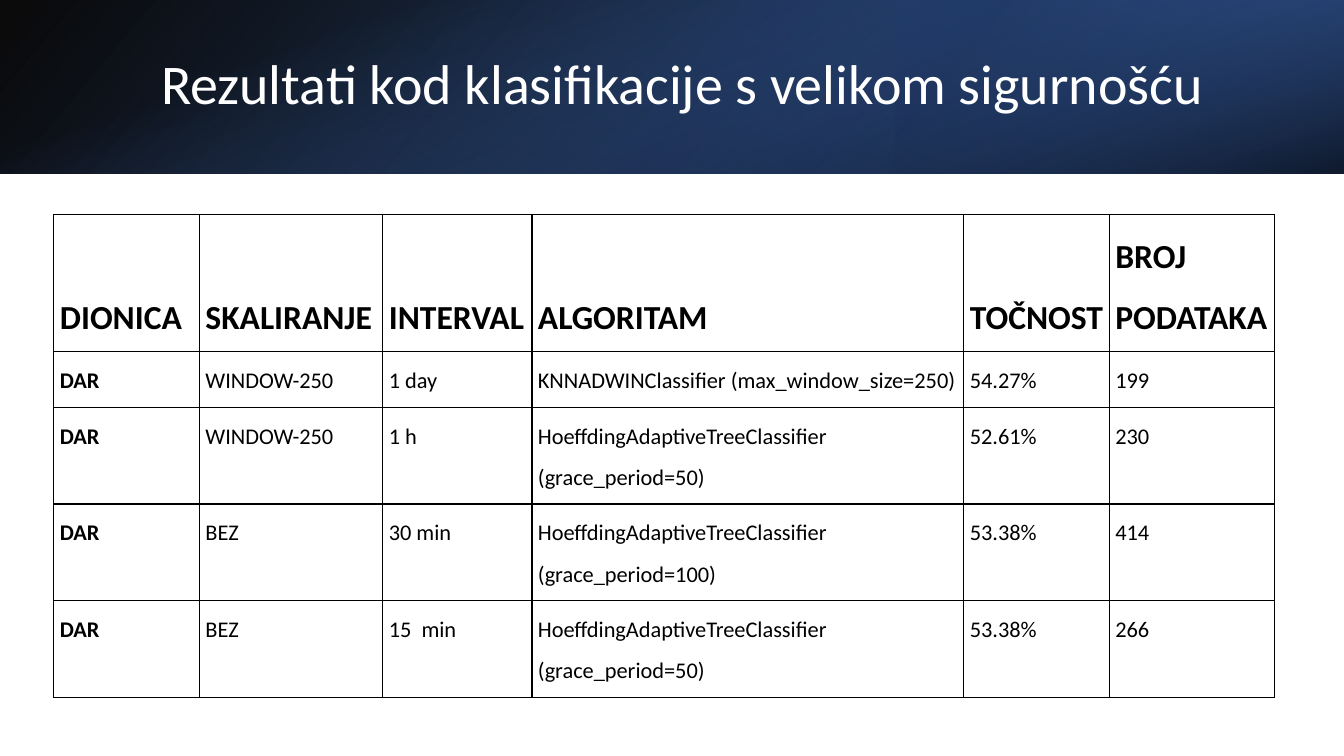
import pptx
import pptx.dml.color
import pptx.enum.shapes
import pptx.enum.text
import pptx.oxml
import pptx.oxml.ns
import pptx.util

Pt = pptx.util.Pt
FONT = "Calibri"
BLACK, WHITE = "000000", "FFFFFF"
NS = pptx.oxml.ns.nsdecls("a")

COLUMN_WIDTHS = [104, 131, 106.5, 308.5, 104, 118]
ROW_HEIGHTS = [98, 40, 69, 69, 69]
ROWS = [
    ["DIONICA", "SKALIRANJE", "INTERVAL", "ALGORITAM", "TOČNOST", "BROJ PODATAKA"],
    ["DAR", "WINDOW-250", "1 day", "KNNADWINClassifier (max_window_size=250)", "54.27%", "199"],
    ["DAR", "WINDOW-250", "1 h", "HoeffdingAdaptiveTreeClassifier (grace_period=50)", "52.61%", "230"],
    ["DAR", "BEZ", "30 min", "HoeffdingAdaptiveTreeClassifier (grace_period=100)", "53.38%", "414"],
    ["DAR", "BEZ", "15  min", "HoeffdingAdaptiveTreeClassifier (grace_period=50)", "53.38%", "266"],
]


def rgb(color):
    return pptx.dml.color.RGBColor.from_string(color)


def style_run(r, size, color, bold=False):
    r.font.name = FONT
    r.font.size = Pt(size)
    r.font.bold = bold
    r.font.color.rgb = rgb(color)


def add_gradient_box(s, x, y, w, h, angle, stops, rotation=0, flip=False):
    """Stops are (position, colour, opacity), both numbers in percent."""
    sp = s.shapes.add_shape(pptx.enum.shapes.MSO_SHAPE.RECTANGLE, Pt(x), Pt(y), Pt(w), Pt(h))
    sp.shadow.inherit = False
    sp.line.fill.background()
    sp.rotation = rotation
    props = sp.element.spPr
    if flip:
        props.xfrm.set("flipH", "1")
    stop_xml = "".join(
        f'<a:gs pos="{pos * 1000}"><a:srgbClr val="{color}">'
        f'<a:alpha val="{opacity * 1000}"/></a:srgbClr></a:gs>'
        for pos, color, opacity in stops)
    props.prstGeom.addnext(pptx.oxml.parse_xml(
        f'<a:gradFill {NS} rotWithShape="1"><a:gsLst>{stop_xml}</a:gsLst>'
        f'<a:lin ang="{angle * 60000}" scaled="0"/></a:gradFill>'))


def add_banner(s, x, y, w, h, title):
    # Layered gradients
    add_gradient_box(s, x, y, w, h, 140, [(0, BLACK, 96), (100, "2F5597", 100)], flip=True)
    add_gradient_box(s, x + w * 2 / 3, y, w / 3, h, 320,
                     [(19, "203864", 68), (100, "4472C4", 79)], rotation=180, flip=True)
    # Upright box turned a quarter about the banner's centre
    add_gradient_box(s, x + (w - h) / 2, y + (h - w) / 2, h, w, 340,
                     [(23, "4472C4", 0), (99, BLACK, 74)], rotation=90)

    # Title
    tf = s.shapes.add_textbox(Pt(x + 108), Pt(y + 27.5), Pt(790.5), Pt(69)).text_frame
    tf.word_wrap = True
    tf.vertical_anchor = pptx.enum.text.MSO_ANCHOR.MIDDLE
    tf.text = title
    p = tf.paragraphs[0]
    p.line_spacing = 0.9
    style_run(p.runs[0], 40, WHITE)


def format_cell(cell, text, header, bold):
    cell.margin_left, cell.margin_top = Pt(4.3), Pt(1.4)
    cell.margin_right, cell.margin_bottom = Pt(3.6), Pt(9.4)
    anchor = pptx.enum.text.MSO_ANCHOR
    cell.vertical_anchor = anchor.BOTTOM if header else anchor.TOP
    cell.text = text
    p = cell.text_frame.paragraphs[0]
    p.alignment = pptx.enum.text.PP_ALIGN.JUSTIFY
    p.line_spacing = 1.5
    p.space_before, p.space_after = Pt(6), Pt(3)
    style_run(p.runs[0], 24 if header else 16, BLACK, bold)

    # Borders come before the fill in the cell properties
    props = cell._tc.get_or_add_tcPr()
    for side in "LRTB":
        props.append(pptx.oxml.parse_xml(
            f'<a:ln{side} {NS} w="{Pt(1)}"><a:solidFill><a:srgbClr val="{BLACK}"/>'
            f'</a:solidFill></a:ln{side}>'))
    cell.fill.background()


def add_results_table(s, x, y):
    table = s.shapes.add_table(len(ROWS), len(COLUMN_WIDTHS), Pt(x), Pt(y),
                               Pt(sum(COLUMN_WIDTHS)), Pt(sum(ROW_HEIGHTS))).table
    table.horz_banding = False
    table.first_row = False
    for column, width in zip(table.columns, COLUMN_WIDTHS):
        column.width = Pt(width)
    for row, height in zip(table.rows, ROW_HEIGHTS):
        row.height = Pt(height)
    for i, values in enumerate(ROWS):
        for j, text in enumerate(values):
            format_cell(table.cell(i, j), text, header=i == 0, bold=i == 0 or j == 0)


def main():
    prs = pptx.Presentation()
    prs.slide_width, prs.slide_height = Pt(960), Pt(540)
    s = prs.slides.add_slide(prs.slide_layouts[6])
    add_banner(s, 0, 0, 960, 124, "Rezultati kod klasifikacije s velikom sigurnošću")
    add_results_table(s, 38.5, 153)
    prs.save("out.pptx")


if __name__ == "__main__":
    main()
